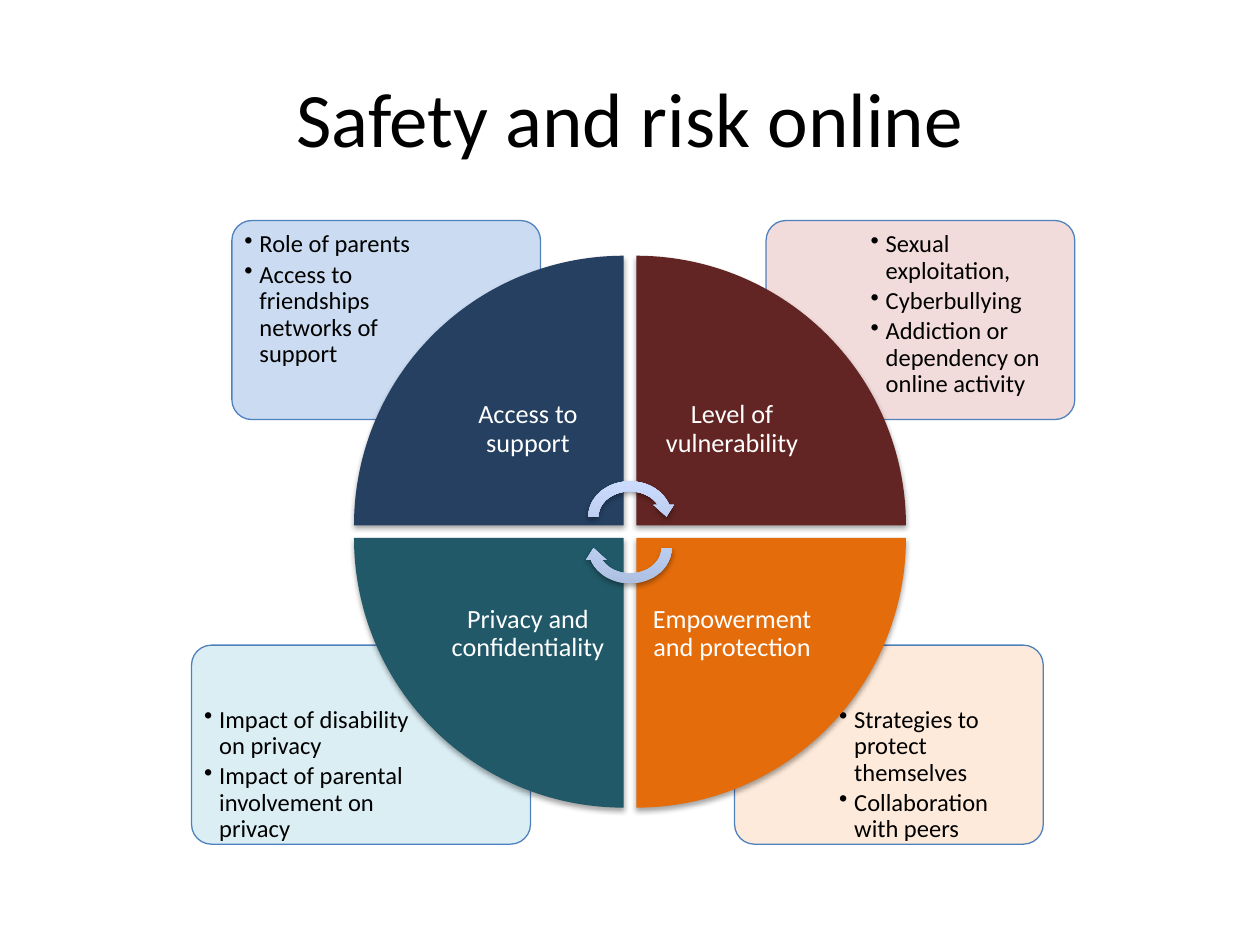
from lxml import etree
from pptx import Presentation
from pptx.dml.color import RGBColor
from pptx.enum.shapes import MSO_SHAPE
from pptx.enum.text import MSO_ANCHOR, PP_ALIGN
from pptx.oxml.ns import qn
from pptx.util import Pt

PX = 9144  # one px is a hundredth of an inch
FONT = "Calibri"
ROUNDED, WEDGE, ARROW = MSO_SHAPE.ROUNDED_RECTANGLE, MSO_SHAPE.PIE_WEDGE, MSO_SHAPE.CIRCULAR_ARROW
TOP, MIDDLE = MSO_ANCHOR.TOP, MSO_ANCHOR.MIDDLE
LEFT, CENTER = PP_ALIGN.LEFT, PP_ALIGN.CENTER

COLORS = {
    "black": "000000", "white": "FFFFFF", "outline": "4F81BD",
    "support": "254061", "support_pale": "C6D9F1",
    "risk": "632523", "risk_pale": "F2DCDB",
    "power": "E46C0A", "power_pale": "FDEADA",
    "privacy": "215968", "privacy_pale": "DBEEF4",
    "arrow_dark": "ADBFE1", "arrow_light": "CCDDFF",
}

# Panels from back to front: box, color, opacity, bullets
PANELS = [
    ((583, 512, 245, 158), "power_pale", 100,
     ["Strategies to protect themselves", "Collaboration with peers"]),
    ((152, 512, 269, 158), "privacy_pale", 100,
     ["Impact of disability on privacy", "Impact of parental involvement on privacy"]),
    ((608, 175, 245, 158), "risk_pale", 100,
     ["Sexual exploitation,", "Cyberbullying", "Addiction or dependency on online activity"]),
    ((184, 175, 245, 158), "support_pale", 90,
     ["Role of parents", "Access to friendships networks of support"]),
]

# Quadrants clockwise from top left: column, row, color, label
QUADRANTS = [
    (0, 0, "support", "Access to support"),
    (1, 0, "risk", "Level of vulnerability"),
    (1, 1, "power", "Empowerment and protection"),
    (0, 1, "privacy", "Privacy and confidentiality"),
]


def rgb(name):
    return RGBColor.from_string(COLORS[name])


def emu(box):
    return [round(length * PX) for length in box]


def add_child(parent, tag, **values):
    child = etree.SubElement(parent, qn(tag))
    for key, value in values.items():
        child.set(key, str(value))
    return child


def add_text(page, box, lines, size, color, inset, anchor=MIDDLE, align=CENTER,
             spacing=0.9, bullets=False):
    frame = page.shapes.add_textbox(*emu(box)).text_frame
    margins = {f"margin_{side}": inset * PX for side in ("left", "right", "top", "bottom")}
    for key, value in {"word_wrap": True, "vertical_anchor": anchor, **margins}.items():
        setattr(frame, key, value)
    for index, line in enumerate(lines):
        para = frame.paragraphs[0] if index == 0 else frame.add_paragraph()
        para.alignment, para.line_spacing = align, spacing
        span = para.add_run()
        span.text = line
        span.font.color.rgb = rgb(color)
        for key, value in {"name": FONT, "size": Pt(size)}.items():
            setattr(span.font, key, value)
        if bullets:
            para.space_after = Pt(2.1)
            props = para._p.get_or_add_pPr()
            props.set("marL", str(12 * PX))
            props.set("indent", str(-12 * PX))
            add_child(props, "a:buChar", char="•")


def add_shape(page, kind, box, rotation=0):
    shape = page.shapes.add_shape(kind, *emu(box))
    shape.rotation = rotation
    shape.shadow.inherit = False
    shape.line.fill.background()
    return shape


def add_shadow(shape):
    effects = shape._element.spPr.find(qn("a:effectLst"))
    shadow = add_child(effects, "a:outerShdw", blurRad=Pt(3.1), dist=Pt(1.8),
                       dir=5400000, rotWithShape=0)
    add_child(add_child(shadow, "a:srgbClr", val=COLORS["black"]), "a:alpha", val=35000)


def draw_title(page, box):
    add_text(page, box, ["Safety and risk online"], 44, "black", 5, spacing=1)


def draw_panel(page, box, color, opacity, bullets):
    left, top, width, height = box
    panel = add_shape(page, ROUNDED, box)
    panel.adjustments[0] = 0.1
    panel.fill.solid()
    panel.fill.fore_color.rgb = rgb(color)
    panel.line.color.rgb = rgb("outline")
    panel.line.width = Pt(0.75)
    if opacity < 100:
        tint = panel._element.spPr.find(qn("a:solidFill"))[0]
        add_child(tint, "a:alpha", val=opacity * 1000)
    # The text keeps to the outer side, clear of the circle
    text_width = int(width * 0.7) - 7
    text_left = left + 4 if left < 500 else left + width - 4 - text_width
    text_top = top + 3 if top < 375 else top + height - 115
    add_text(page, (text_left, text_top, text_width, 112), bullets, 14, "black", 6,
             anchor=TOP, align=LEFT, bullets=True)


def draw_wheel(page, box, gap=10, label_size=152):
    left, top, width, height = box
    radius = (width - gap) // 2
    # Wedges, each with its label at the inner corner
    for index, (column, row, color, label) in enumerate(QUADRANTS):
        x = left + column * (radius + gap)
        y = top + row * (radius + gap)
        wedge = add_shape(page, WEDGE, (x, y, radius, radius), index * 90)
        wedge.fill.solid()
        wedge.fill.fore_color.rgb = rgb(color)
        add_shadow(wedge)
        offset = radius - label_size
        label_box = (x + (1 - column) * offset, y + (1 - row) * offset, label_size, label_size)
        add_text(page, label_box, [label], 15, "white", 12)
    # Pair of turning arrows in the center
    for y, rotation in ((top + 175, 0), (top + 200, 180)):
        arrow = add_shape(page, ARROW, (left + width // 2 - 37, y, 74, 64), rotation)
        arrow.fill.gradient()
        arrow.fill.gradient_angle = 90
        for stop, color in zip(arrow.fill.gradient_stops, ("arrow_dark", "arrow_light")):
            stop.color.rgb = rgb(color)
        arrow._element.spPr.find(qn("a:gradFill")).set("rotWithShape", "0")
        add_shadow(arrow)


def main():
    deck = Presentation()
    deck.slide_width, deck.slide_height = emu((1000, 750))
    page = deck.slides.add_slide(deck.slide_layouts[6])
    draw_title(page, (50, 30, 900, 125))
    for panel in PANELS:
        draw_panel(page, *panel)
    draw_wheel(page, (281, 203, 438, 438))
    deck.save("out.pptx")


if __name__ == "__main__":
    main()
